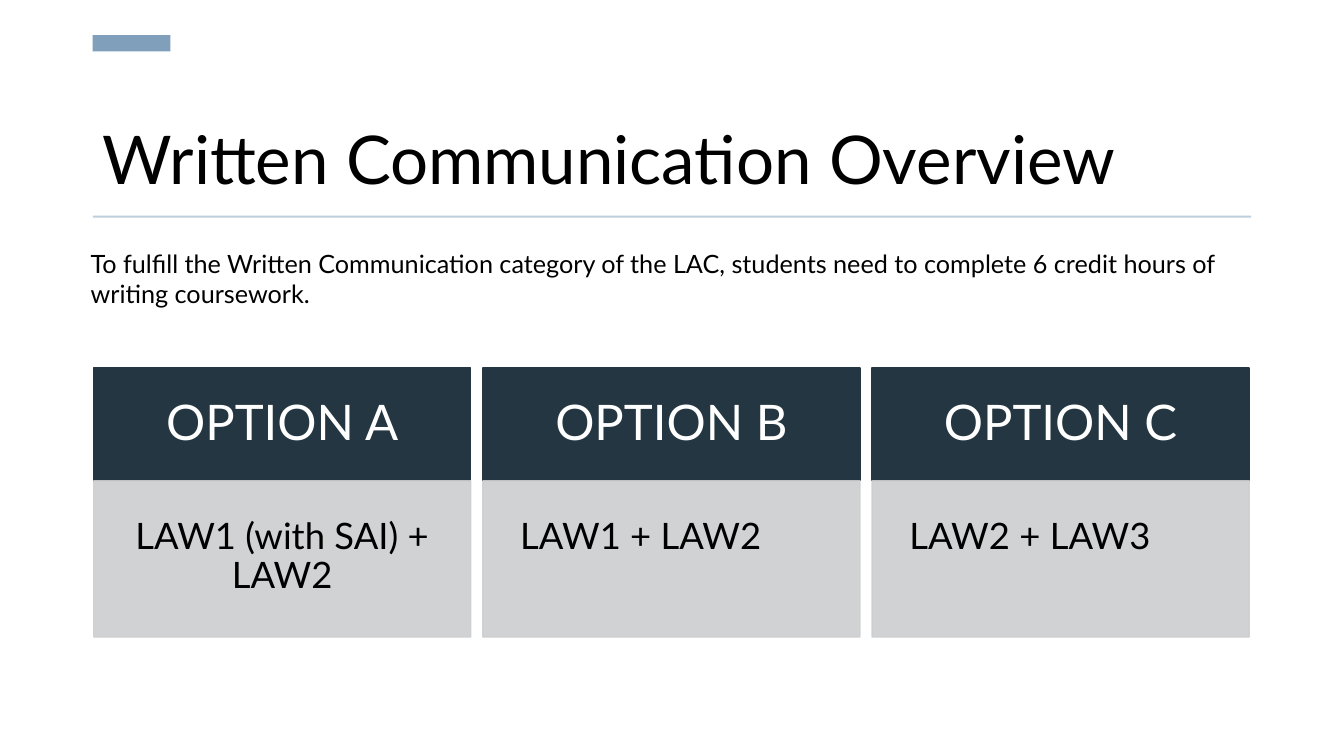
from lxml import etree
from pptx import Presentation
from pptx.dml.color import RGBColor
from pptx.enum.shapes import MSO_SHAPE
from pptx.enum.text import MSO_ANCHOR, PP_ALIGN
from pptx.oxml.ns import qn
from pptx.util import Inches, Pt

RECT = MSO_SHAPE.RECTANGLE
LEFT, CENTER = PP_ALIGN.LEFT, PP_ALIGN.CENTER
TOP, MIDDLE, BOTTOM = MSO_ANCHOR.TOP, MSO_ANCHOR.MIDDLE, MSO_ANCHOR.BOTTOM

# Content
TITLE = "Written Communication Overview"
INTRO = ("To fulfill the Written Communication category of the LAC, students need "
         "to complete 6 credit hours of writing coursework.")
OPTIONS = [
    ("OPTION A", "LAW1 (with SAI) + LAW2", CENTER),
    ("OPTION B", "LAW1 + LAW2", LEFT),
    ("OPTION C", "LAW2 + LAW3", LEFT),
]

# Style and layout, in inches
FONT = "Lato"
BLACK, WHITE, NAVY, GREY = "000000", "FFFFFF", "243641", "CDCECF"
ACCENT, RULE = "7F9FBA", "BDCFDB"
MARGIN, CONTENT_WIDTH = 0.92, 11.49
COLUMN_LEFT, COLUMN_WIDTH, COLUMN_STEP = 0.93, 3.74, 3.86
HEAD_TOP, HEAD_HEIGHT, BODY_HEIGHT = 3.65, 1.12, 1.55


def rgb(color):
    return RGBColor.from_string(color)


def write(shape, text, size, color, align=LEFT, anchor=TOP, spacing=None, inset=None):
    frame = shape.text_frame
    frame.word_wrap = True
    frame.vertical_anchor = anchor
    if inset is not None:
        frame.margin_left = frame.margin_right = Inches(inset)
        frame.margin_top = frame.margin_bottom = Inches(inset)
    paragraph = frame.paragraphs[0]
    paragraph.alignment = align
    paragraph.line_spacing = spacing
    run = paragraph.add_run()
    run.text = text
    run.font.name = FONT
    run.font.size = Pt(size)
    run.font.color.rgb = rgb(color)


def add_box(left, top, width, height, color, outlined=False, opacity=100):
    box = slide.shapes.add_shape(RECT, Inches(left), Inches(top), Inches(width), Inches(height))
    box.shadow.inherit = False
    box.fill.solid()
    box.fill.fore_color.rgb = rgb(color)
    if outlined:
        box.line.color.rgb = rgb(color)
        box.line.width = Pt(1)
    else:
        box.line.fill.background()
    if opacity < 100:
        for tint in box.element.spPr.iter(qn("a:srgbClr")):
            etree.SubElement(tint, qn("a:alpha"), val=str(opacity * 1000))
    return box


prs = Presentation()
prs.slide_width, prs.slide_height = Inches(13.33), Inches(7.5)
slide = prs.slides.add_slide(prs.slide_layouts[5])

# Title with accent bar and rule
title = slide.shapes.title
title.left, title.top = Inches(MARGIN), Inches(0.75)
title.width, title.height = Inches(CONTENT_WIDTH), Inches(1.27)
write(title, TITLE, 48, BLACK, anchor=BOTTOM, spacing=0.9)
add_box(MARGIN, 0.35, 0.77, 0.16, ACCENT)
add_box(MARGIN, 2.14, CONTENT_WIDTH, 0.02, RULE)

# Option columns
for column, (option, courses, align) in enumerate(OPTIONS):
    left = COLUMN_LEFT + column * COLUMN_STEP
    head = add_box(left, HEAD_TOP, COLUMN_WIDTH, HEAD_HEIGHT, NAVY, outlined=True)
    write(head, option, 35, WHITE, CENTER, MIDDLE, 0.9, 0.3)
    body = add_box(left, HEAD_TOP + HEAD_HEIGHT, COLUMN_WIDTH, BODY_HEIGHT, GREY,
                   outlined=True, opacity=90)
    write(body, courses, 26, BLACK, align, TOP, 0.9, 0.37)

# Introduction
intro = slide.shapes.add_textbox(Inches(0.8), Inches(2.41), Inches(11.61), Inches(0.71))
write(intro, INTRO, 18, BLACK)

prs.save("out.pptx")
